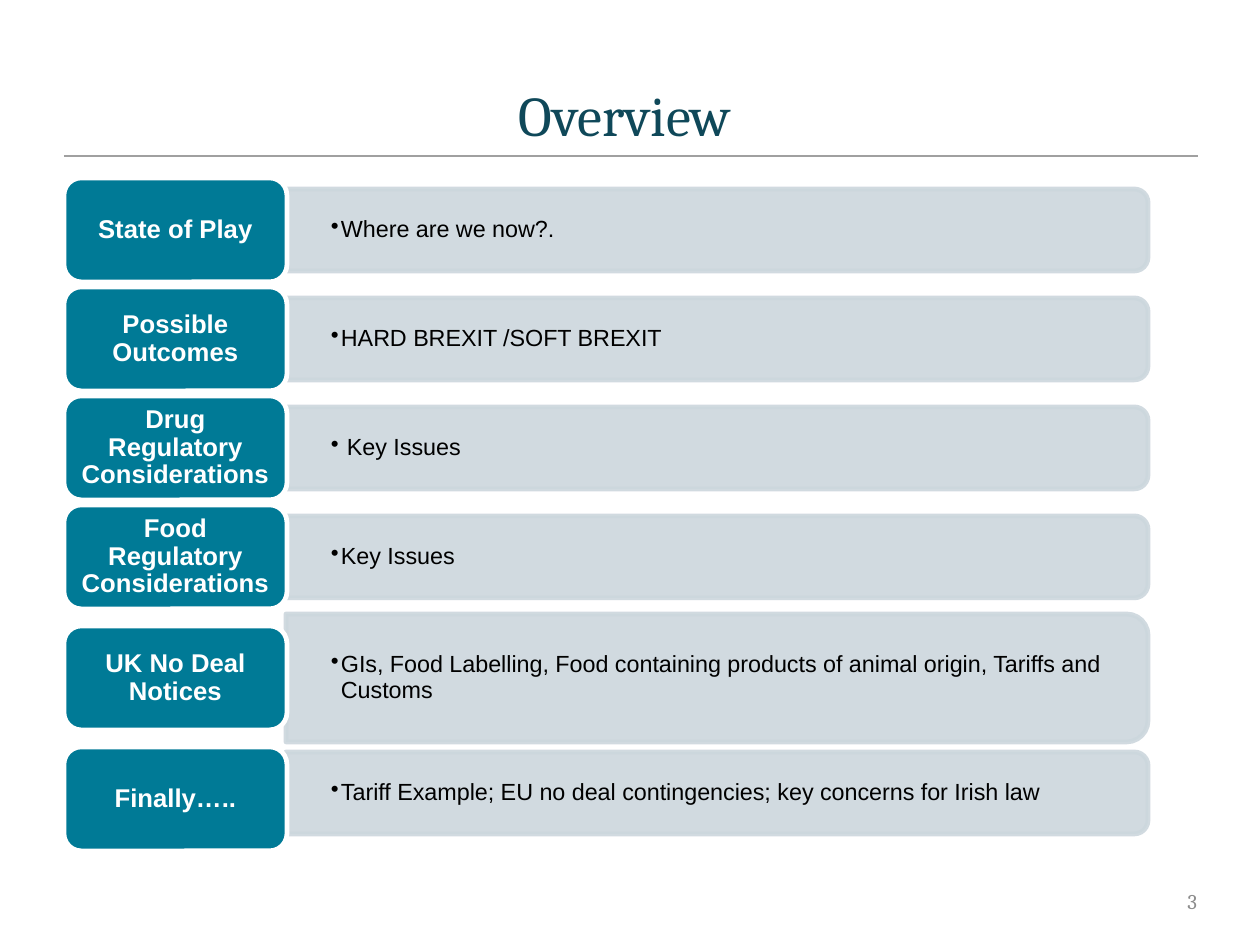
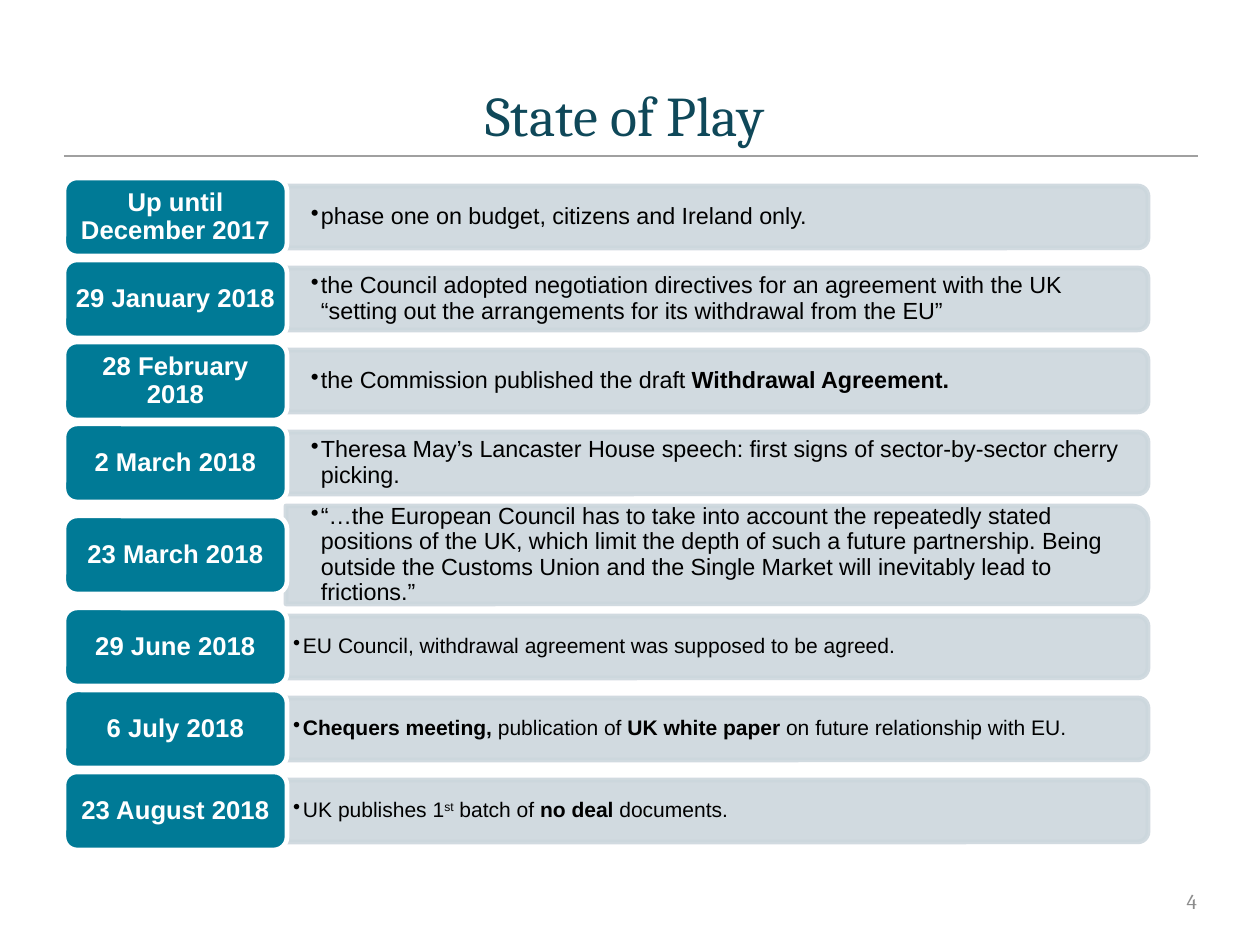
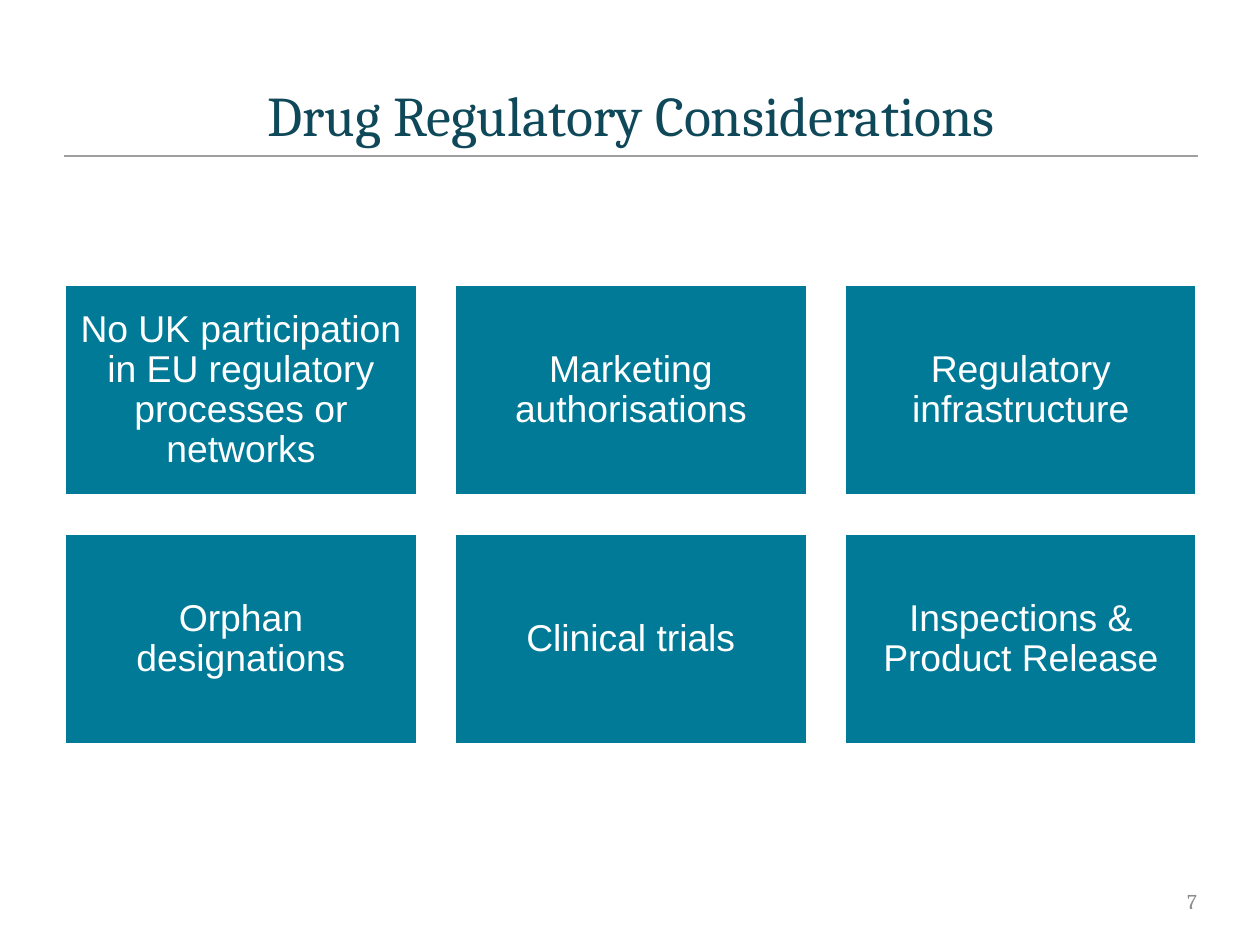
from dataclasses import dataclass

from lxml.etree import SubElement
from pptx import Presentation
from pptx.dml.color import RGBColor
from pptx.enum.shapes import MSO_CONNECTOR, MSO_SHAPE
from pptx.enum.text import MSO_ANCHOR as Anchor, MSO_AUTO_SIZE as AutoSize, PP_ALIGN as Align
from pptx.oxml.ns import qn
from pptx.shapes.base import BaseShape
from pptx.slide import Slide
from pptx.text.text import TextFrame, _Paragraph as Paragraph, _Run as Run
from pptx.util import Emu, Pt

PX_PER_INCH = 168
SLIDE_WIDTH, SLIDE_HEIGHT = 1260, 945
MARGIN = 64
CONTENT_WIDTH = 1134
COLORS = {
    "title": "0F4859",
    "rule": "A0A0A0",
    "number": "8C8C8C",
    "bar": "CCD7DD",
    "label": "007A96",
    "white": "FFFFFF",
    "black": "000000",
}
BODY_FONT, HEADING_FONT = "Arial", "Cambria"
ROWS_TOP = 178
LABEL_WIDTH = 223
BAR_LEFT, BAR_WIDTH = 286, 862


@dataclass(frozen=True)
class Box:
    """A rectangle in px."""

    left: int
    top: int
    width: int
    height: int


@dataclass(frozen=True)
class Span:
    """A stretch of text in one style."""

    text: str
    bold: bool = False
    raised: bool = False


@dataclass(frozen=True)
class Row:
    """A label with the bar that explains it."""

    label: str
    spans: tuple[Span, ...]
    tall: bool = False
    size: int = 10
    inset: int | None = None
    indent: int = 10
    bar_shift: int = 0


@dataclass(frozen=True)
class RowStyle:
    """The measures of one stack of rows, in px."""

    label_height: int
    bar_height: int
    tall_height: int
    gap: int
    inset: int


OVERVIEW_STYLE = RowStyle(label_height=104, bar_height=82, tall_height=128, gap=5, inset=45)
OVERVIEW_ROWS = (
    Row("State of Play", (Span("Where are we now?."),)),
    Row("Possible Outcomes", (Span("HARD BREXIT /SOFT BREXIT"),)),
    Row("Drug Regulatory Considerations", (Span("Key Issues"),), indent=16),
    Row("Food Regulatory Considerations", (Span("Key Issues"),)),
    Row(
        "UK No Deal Notices",
        (Span("GIs, Food Labelling, Food containing products of animal origin, Tariffs and Customs"),),
        tall=True,
    ),
    Row(
        "Finally…..",
        (Span("Tariff Example; EU no deal contingencies; key concerns for Irish law"),),
        bar_shift=-6,
    ),
)
TIMELINE_STYLE = RowStyle(label_height=78, bar_height=62, tall_height=98, gap=4, inset=25)
TIMELINE_ROWS = (
    Row("Up until December 2017", (Span("phase one on budget, citizens and Ireland only."),)),
    Row(
        "29 January 2018",
        (Span("the Council adopted negotiation directives for an agreement with the UK "
              "“setting out the arrangements for its withdrawal from the EU”"),),
    ),
    Row(
        "28 February 2018",
        (Span("the Commission published the draft "), Span("Withdrawal Agreement.", bold=True)),
    ),
    Row(
        "2 March 2018",
        (Span("Theresa May’s Lancaster House speech: first signs of sector-by-sector cherry picking."),),
    ),
    Row(
        "23 March 2018",
        (Span("“…the European Council has to take into account the repeatedly stated positions of the UK, "
              "which limit the depth of such a future partnership. Being outside the Customs Union and the "
              "Single Market will inevitably lead to frictions.”"),),
        tall=True,
    ),
    Row(
        "29 June 2018",
        (Span("EU Council, withdrawal agreement was supposed to be agreed."),),
        size=9,
        inset=7,
    ),
    Row(
        "6 July 2018",
        (
            Span("Chequers meeting, ", bold=True),
            Span("publication of "),
            Span("UK white paper ", bold=True),
            Span("on future relationship with EU."),
        ),
        size=9,
        inset=7,
    ),
    Row(
        "23 August 2018",
        (
            Span("UK publishes 1"),
            Span("st", raised=True),
            Span(" batch of "),
            Span("no deal", bold=True),
            Span(" documents."),
        ),
        size=9,
        inset=7,
    ),
)
TOPICS = (
    "No UK participation in EU regulatory processes or networks",
    "Marketing authorisations",
    "Regulatory infrastructure",
    "Orphan designations",
    "Clinical trials",
    "Inspections & Product Release",
)


def px(length: int) -> Emu:
    """Turn px into EMU."""
    return Emu(round(length * 914400 / PX_PER_INCH))


def rgb(name: str) -> RGBColor:
    """Look up a colour."""
    return RGBColor.from_string(COLORS[name])


def place(box: Box) -> tuple[Emu, Emu, Emu, Emu]:
    """Give a box as left, top, width and height in EMU."""
    return px(box.left), px(box.top), px(box.width), px(box.height)


def style_run(run: Run, size: int, color: str, font: str = BODY_FONT, bold: bool = False) -> None:
    """Format one run."""
    run.font.name = font
    run.font.size = Pt(size)
    run.font.color.rgb = rgb(color)
    run.font.bold = bold


def set_frame(frame: TextFrame, anchor: Anchor, horizontal: int, vertical: int) -> None:
    """Set wrapping, anchor and insets of a text frame."""
    frame.word_wrap = True
    frame.auto_size = AutoSize.NONE
    frame.vertical_anchor = anchor
    frame.margin_left = frame.margin_right = px(horizontal)
    frame.margin_top = frame.margin_bottom = px(vertical)


def write_line(frame: TextFrame, text: str, align: Align, size: int, color: str,
               font: str = BODY_FONT, bold: bool = False) -> Paragraph:
    """Fill a frame with one paragraph in one style."""
    frame.text = text
    paragraph = frame.paragraphs[0]
    paragraph.alignment = align
    style_run(paragraph.runs[0], size, color, font, bold)
    return paragraph


def add_block(slide: Slide, kind: MSO_SHAPE, box: Box, fill: str, line: str) -> BaseShape:
    """Add a filled shape with a two-point outline."""
    shape = slide.shapes.add_shape(kind, *place(box))
    shape.shadow.inherit = False
    shape.fill.solid()
    shape.fill.fore_color.rgb = rgb(fill)
    shape.line.color.rgb = rgb(line)
    shape.line.width = Pt(2)
    return shape


def add_text_block(slide: Slide, kind: MSO_SHAPE, box: Box, text: str, size: int,
                   insets: tuple[int, int], bold: bool = False) -> None:
    """Add a teal block with centred white text."""
    shape = add_block(slide, kind, box, "label", "white")
    set_frame(shape.text_frame, Anchor.MIDDLE, *insets)
    paragraph = write_line(shape.text_frame, text, Align.CENTER, size, "white", bold=bold)
    paragraph.line_spacing = 0.9


def add_bar(slide: Slide, box: Box) -> None:
    """Add a translucent bar rounded at its right end."""
    middle_x = box.left + box.width // 2
    middle_y = box.top + box.height // 2
    upright = Box(middle_x - box.height // 2, middle_y - box.width // 2, box.height, box.width)
    shape = add_block(slide, MSO_SHAPE.ROUND_2_SAME_RECTANGLE, upright, "bar", "bar")
    shape.rotation = 90
    for color in shape._element.spPr.iter(qn("a:srgbClr")):
        SubElement(color, qn("a:alpha"), val="90000")


def add_bullet(slide: Slide, box: Box, row: Row, inset: int) -> None:
    """Add the bulleted text of a bar."""
    frame = slide.shapes.add_textbox(*place(box)).text_frame
    set_frame(frame, Anchor.MIDDLE, inset, 0)
    paragraph = frame.paragraphs[0]
    paragraph.line_spacing = 0.9
    properties = paragraph._p.get_or_add_pPr()
    properties.set("marL", str(px(row.indent)))
    properties.set("indent", str(-px(row.indent)))
    SubElement(properties, qn("a:buChar"), char="•")
    for span in row.spans:
        run = paragraph.add_run()
        run.text = span.text
        style_run(run, row.size, "black", bold=span.bold)
        if span.raised:
            run._r.get_or_add_rPr().set("baseline", "30000")


def add_rows(slide: Slide, rows: tuple[Row, ...], style: RowStyle) -> None:
    """Stack rows, each label centred on its bar."""
    top = ROWS_TOP
    for row in rows:
        bar_height = style.tall_height if row.tall else style.bar_height
        row_height = max(bar_height, style.label_height)
        bar_top = top + (row_height - bar_height) // 2 + row.bar_shift
        label_top = top + (row_height - style.label_height) // 2
        bar = Box(BAR_LEFT, bar_top, BAR_WIDTH, bar_height)
        add_bar(slide, bar)
        add_bullet(slide, bar, row, style.inset if row.inset is None else row.inset)
        label = Box(MARGIN, label_top, LABEL_WIDTH, style.label_height)
        add_text_block(slide, MSO_SHAPE.ROUNDED_RECTANGLE, label, row.label, 11, (8, 3), bold=True)
        top += row_height + style.gap


def add_topics(slide: Slide) -> None:
    """Lay the topics out in a grid of three columns."""
    width, height, gap, grid_top, columns = 354, 213, 36, 284, 3
    for index, topic in enumerate(TOPICS):
        line, column = divmod(index, columns)
        box = Box(MARGIN + column * (width + gap), grid_top + line * (height + gap), width, height)
        add_text_block(slide, MSO_SHAPE.RECTANGLE, box, topic, 16, (12, 12))


def add_slide(presentation: Presentation, title: str, number: int) -> Slide:
    """Add a slide with its rule, title and number."""
    slide = presentation.slides.add_slide(presentation.slide_layouts[5])
    heading = slide.shapes.title
    heading.left, heading.top, heading.width, heading.height = place(Box(MARGIN, 72, CONTENT_WIDTH, 84))
    set_frame(heading.text_frame, Anchor.BOTTOM, 17, 8)
    write_line(heading.text_frame, title, Align.CENTER, 24, "title", HEADING_FONT)

    rule = slide.shapes.add_connector(
        MSO_CONNECTOR.STRAIGHT, px(MARGIN), px(156), px(MARGIN + CONTENT_WIDTH), px(156))
    rule.line.color.rgb = rgb("rule")
    rule.line.width = Pt(1)
    SubElement(rule._element.spPr, qn("a:effectLst"))

    frame = slide.shapes.add_textbox(*place(Box(914, 876, 283, 50))).text_frame
    set_frame(frame, Anchor.MIDDLE, 0, 8)
    write_line(frame, str(number), Align.RIGHT, 9, "number", HEADING_FONT)
    return slide


def main() -> None:
    """Build and save the slides."""
    presentation = Presentation()
    presentation.slide_width, presentation.slide_height = px(SLIDE_WIDTH), px(SLIDE_HEIGHT)
    add_rows(add_slide(presentation, "Overview ", 3), OVERVIEW_ROWS, OVERVIEW_STYLE)
    add_rows(add_slide(presentation, "State of Play ", 4), TIMELINE_ROWS, TIMELINE_STYLE)
    add_topics(add_slide(presentation, "Drug Regulatory Considerations", 7))
    presentation.save("out.pptx")


if __name__ == "__main__":
    main()
